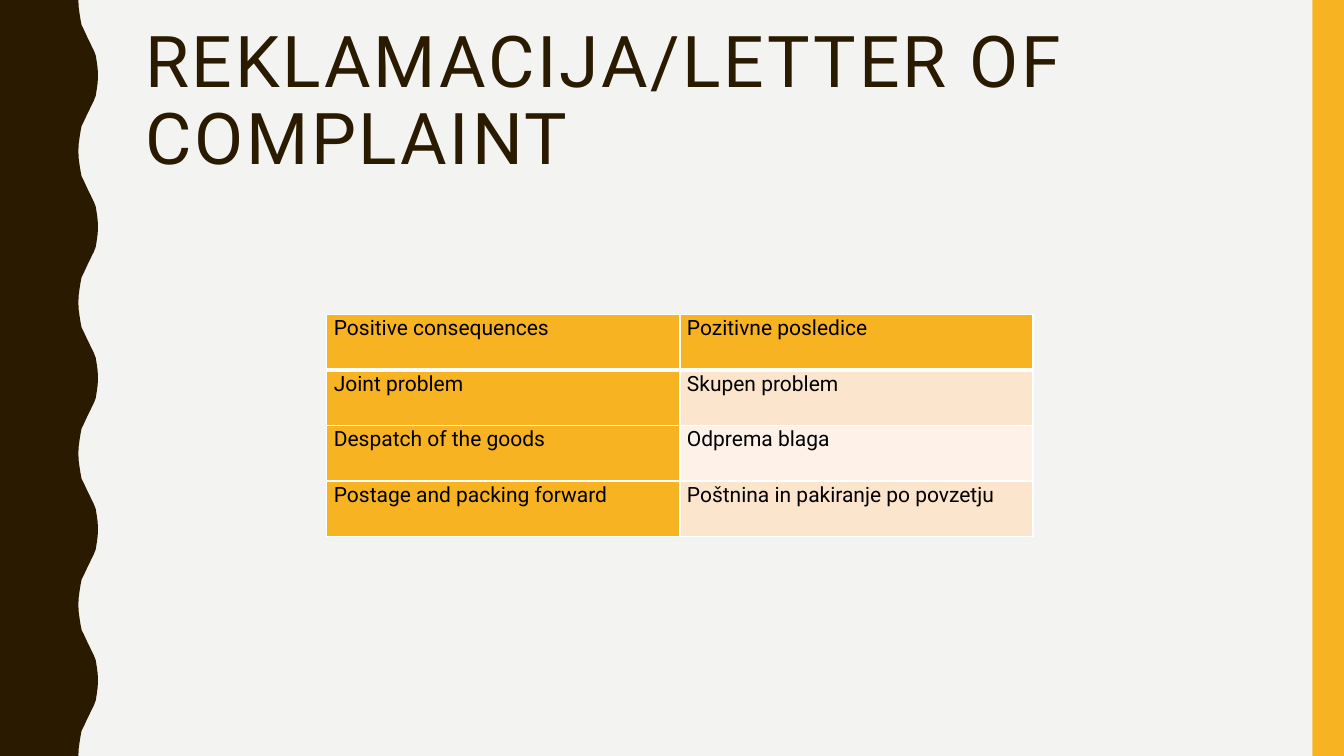
"""Builds the complaint letter vocabulary slide."""
from lxml.etree import SubElement
from pptx import Presentation
from pptx.dml.color import RGBColor
from pptx.enum.shapes import MSO_SHAPE
from pptx.enum.text import MSO_ANCHOR
from pptx.oxml.ns import qn
from pptx.util import Pt

TITLE = "REKLAMACIJA/LETTER OF COMPLAINT"
ROWS = [
    ("Positive consequences", "Pozitivne posledice"),
    ("Joint problem", "Skupen problem"),
    ("Despatch of the goods", "Odprema blaga"),
    ("Postage and packing forward", "Poštnina in pakiranje po povzetju"),
]
FONT = "Roboto"
BROWN, AMBER, WHITE = "2A1A00", "F8B323", "FFFFFF"
BANDS = ["FEF2E8", "FCE5CD"]
WIDTH, HEIGHT = 960, 540
PERIOD = 108
HALF_WAVE = [
    (56, 0), (56.2, 5), (56.9, 10), (57.6, 14.4), (58.3, 18),
    (59.8, 21), (61.2, 24), (62.6, 27), (64.1, 30), (65.5, 33),
    (67, 36), (68.4, 39.6), (69.1, 44), (69.8, 49), (70, 54),
]


def color(value):
    return RGBColor.from_string(value)


def paint(shape, value):
    shape.fill.solid()
    shape.fill.fore_color.rgb = color(value)
    shape.line.fill.background()
    shape.shadow.inherit = False


def write(tf, text, size, value, spacing):
    p = tf.paragraphs[0]
    p.line_spacing = spacing
    r = p.add_run()
    r.text = text
    r.font.name = FONT
    r.font.size = Pt(size)
    r.font.color.rgb = color(value)
    return r


def add_wave(s):
    full = HALF_WAVE + [(x, PERIOD - y) for x, y in HALF_WAVE[-2::-1]]
    edge = [(x, y + n * PERIOD) for n in range(HEIGHT // PERIOD) for x, y in full]
    fb = s.shapes.build_freeform(0, 0, scale=Pt(1) / 10)
    points = edge + [(0, HEIGHT)]
    fb.add_line_segments([(round(x * 10), round(y * 10)) for x, y in points])
    paint(fb.convert_to_shape(), BROWN)


def add_borders(cell, widths):
    tc_pr = cell._tc.get_or_add_tcPr()
    for i, (side, width) in enumerate(widths.items()):
        ln = SubElement(tc_pr, qn(f"a:ln{side}"), w=str(Pt(width)))
        fill = SubElement(ln, qn("a:solidFill"))
        SubElement(fill, qn("a:srgbClr"), val=WHITE)
        tc_pr.insert(i, ln)


def add_words(s):
    frame = s.shapes.add_table(len(ROWS), 2, Pt(233.5), Pt(224.8), Pt(504.4), Pt(158.4))
    table = frame.table
    for i, row in enumerate(ROWS):
        for j, text in enumerate(row):
            cell = table.cell(i, j)
            cell.margin_left = cell.margin_right = Pt(5)
            cell.margin_top = cell.margin_bottom = 0
            cell.fill.solid()
            fill = AMBER if i == 0 or j == 0 else BANDS[i % 2]
            cell.fill.fore_color.rgb = color(fill)
            write(cell.text_frame, text, 15, "000000", 1.07)
            add_borders(cell, {"L": 1, "R": 1, "T": 3 if i == 1 else 1,
                               "B": 3 if i == 0 else 1})


def main():
    prs = Presentation()
    prs.slide_width, prs.slide_height = Pt(WIDTH), Pt(HEIGHT)
    s = prs.slides.add_slide(prs.slide_layouts[6])
    s.background.fill.solid()
    s.background.fill.fore_color.rgb = color("F3F3F2")

    add_wave(s)
    bar = s.shapes.add_shape(MSO_SHAPE.RECTANGLE, Pt(937.5), 0, Pt(22.5), Pt(HEIGHT))
    paint(bar, AMBER)

    tf = s.shapes.add_textbox(Pt(96.5), Pt(15), Pt(801.5), Pt(117.5)).text_frame
    tf.word_wrap = True
    tf.vertical_anchor = MSO_ANCHOR.MIDDLE
    r = write(tf, TITLE, 51, BROWN, 0.9)
    r.font._element.set("spc", "200")

    add_words(s)
    prs.save("out.pptx")


if __name__ == "__main__":
    main()
